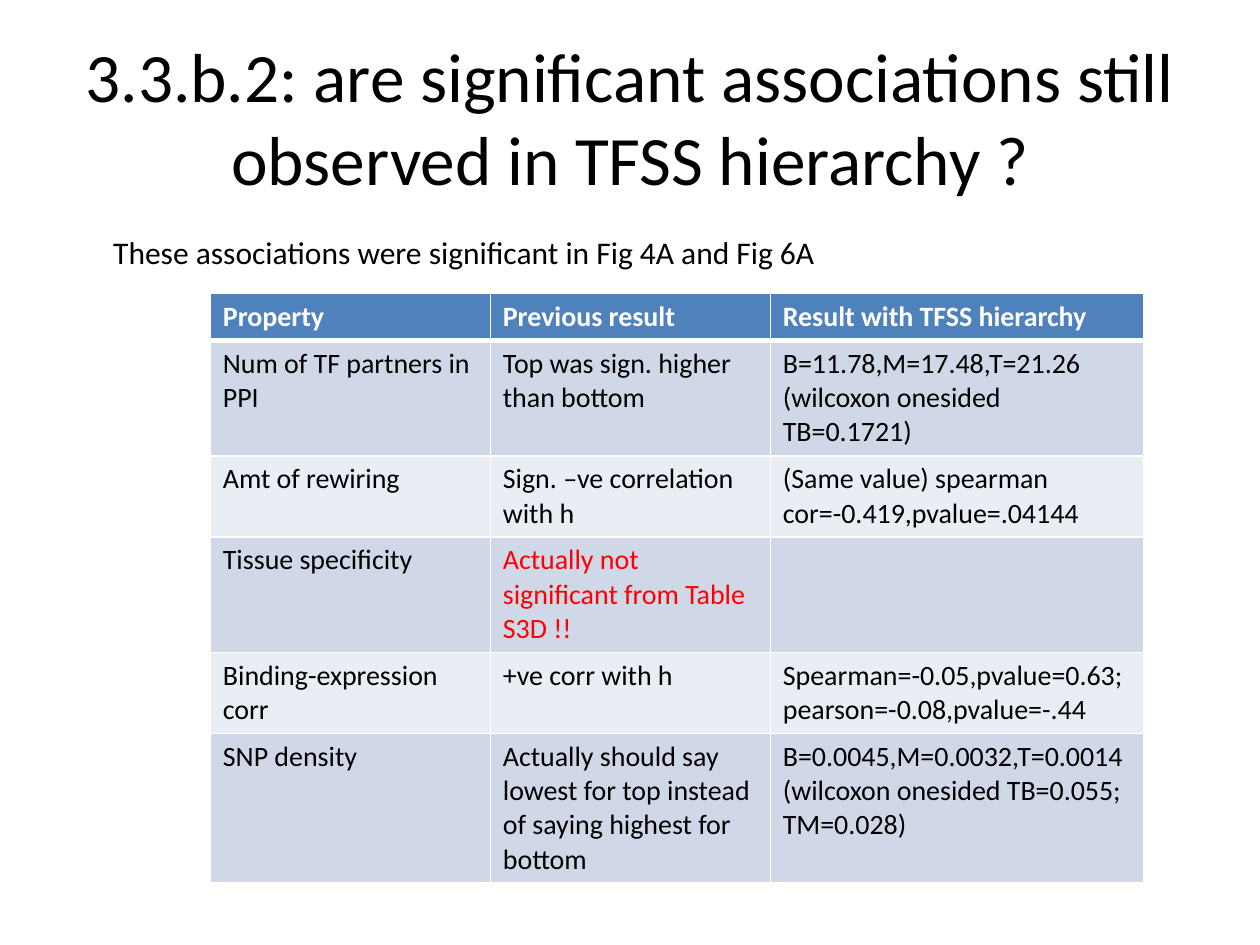
"""Build the slide on associations in the TFSS hierarchy."""
from lxml import etree
from pptx import Presentation
from pptx.dml.color import RGBColor
from pptx.enum.text import MSO_ANCHOR, MSO_AUTO_SIZE, PP_ALIGN
from pptx.oxml.ns import qn
from pptx.util import Pt

CENTER, LEFT = PP_ALIGN.CENTER, PP_ALIGN.LEFT
MIDDLE = MSO_ANCHOR.MIDDLE
NO_AUTOFIT = MSO_AUTO_SIZE.NONE
FONT = "Calibri"
BLACK, WHITE, RED = "000000", "FFFFFF", "FF0000"
HEADER_FILL, BAND_FILLS = "4F81BD", ("D0D8E8", "E9EDF4")
COLUMN_WIDTHS = (160, 160, 213.3)
ROW_HEIGHTS = (26.7, 65.8, 46.3, 65.8, 46.3, 85.3)
WARNING = "Actually not significant from Table S3D !!"
RESULTS = (
    ("Property", "Previous result", "Result with TFSS hierarchy"),
    ("Num of TF partners in PPI", "Top was sign. higher than bottom",
     "B=11.78,M=17.48,T=21.26 (wilcoxon onesided TB=0.1721)"),
    ("Amt of rewiring", "Sign. –ve correlation with h",
     "(Same value) spearman cor=-0.419,pvalue=.04144"),
    ("Tissue specificity", WARNING, ""),
    ("Binding-expression corr", "+ve corr with h",
     "Spearman=-0.05,pvalue=0.63; pearson=-0.08,pvalue=-.44"),
    ("SNP density",
     "Actually should say lowest for top instead of saying highest for bottom",
     "B=0.0045,M=0.0032,T=0.0014\n(wilcoxon onesided TB=0.055; TM=0.028)"),
)


def rgb(value):
    """Return the colour for a hex string."""
    return RGBColor.from_string(value)


def write(frame, text, size, color=BLACK, bold=False, align=LEFT):
    """Fill a text frame with evenly formatted paragraphs."""
    frame.text = text
    for paragraph in frame.paragraphs:
        paragraph.alignment = align
        font = paragraph.font
        font.name, font.size, font.bold = FONT, Pt(size), bold
        font.color.rgb = rgb(color)


def add_title(slide, text):
    """Place the title in its placeholder."""
    title = slide.shapes.title
    title.left, title.top, title.width, title.height = Pt(36), Pt(21.6), Pt(648), Pt(90)
    frame = title.text_frame
    frame.auto_size, frame.vertical_anchor = NO_AUTOFIT, MIDDLE
    write(frame, text, 39.6, align=CENTER)


def add_remark(slide, text):
    """Add the line of text above the table."""
    remark = slide.shapes.add_textbox(Pt(57.6), Pt(129.6), Pt(586.8), Pt(29))
    remark.text_frame.word_wrap = True
    write(remark.text_frame, text, 18)


def set_borders(cell, bottom_width):
    """Draw white borders around a cell."""
    properties = cell._tc.get_or_add_tcPr()
    for side, width in (("L", 1), ("R", 1), ("T", 1), ("B", bottom_width)):
        border = etree.SubElement(properties, qn(f"a:ln{side}"), w=str(Pt(width)))
        fill = etree.SubElement(border, qn("a:solidFill"))
        etree.SubElement(fill, qn("a:srgbClr"), val=WHITE)


def format_cell(cell, text, row_index):
    """Write and colour one cell according to its row."""
    is_header = row_index == 0
    set_borders(cell, 3 if is_header else 1)
    cell.fill.solid()
    cell.fill.fore_color.rgb = rgb(HEADER_FILL if is_header else BAND_FILLS[(row_index - 1) % 2])
    color = WHITE if is_header else RED if text == WARNING else BLACK
    write(cell.text_frame, text, 16, color, is_header)


def add_results(slide):
    """Add the table of earlier and new results."""
    table = slide.shapes.add_table(
        len(RESULTS), len(COLUMN_WIDTHS), Pt(120.2), Pt(167.8),
        Pt(sum(COLUMN_WIDTHS)), Pt(sum(ROW_HEIGHTS))).table
    for column, width in zip(table.columns, COLUMN_WIDTHS):
        column.width = Pt(width)
    for row_index, (row, height, texts) in enumerate(zip(table.rows, ROW_HEIGHTS, RESULTS)):
        row.height = Pt(height)
        for cell, text in zip(row.cells, texts):
            format_cell(cell, text, row_index)


def main():
    """Build and save the presentation."""
    presentation = Presentation()
    presentation.slide_width, presentation.slide_height = Pt(720), Pt(540)
    slide = presentation.slides.add_slide(presentation.slide_layouts[5])
    add_title(slide, "3.3.b.2: are significant associations still observed in TFSS hierarchy ?")
    add_results(slide)
    add_remark(slide, "These associations were significant in Fig 4A and Fig 6A")
    presentation.save("out.pptx")


if __name__ == "__main__":
    main()
